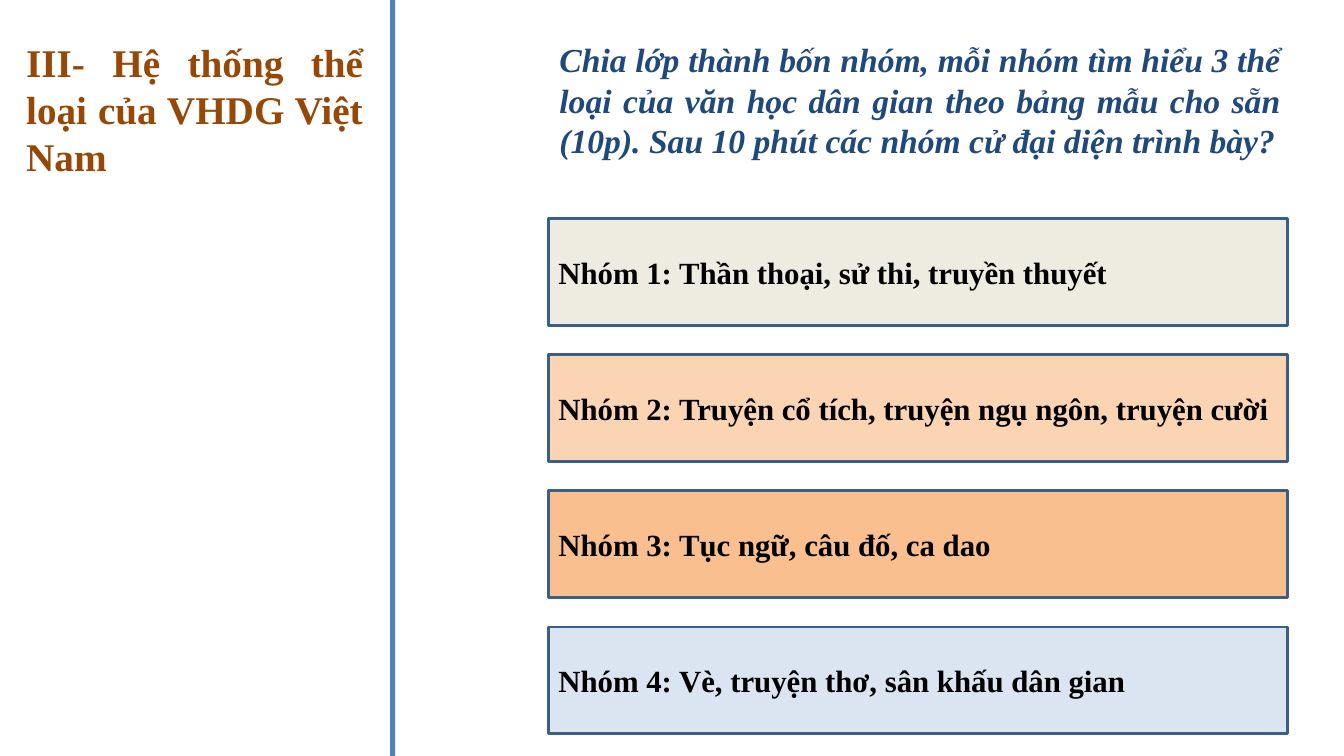
from pptx import Presentation
from pptx import util as u
from pptx.dml.color import RGBColor
from pptx.enum import shapes, text

WIDTH, HEIGHT = 13.33, 7.5
FONT = "Times New Roman"
TITLE_ONLY = 5

HEADING = "III- Hệ thống thể loại của VHDG Việt Nam"
TASK = ("Chia lớp thành bốn nhóm, mỗi nhóm tìm hiểu 3 thể loại của văn học dân gian "
        "theo bảng mẫu cho sẵn (10p). Sau 10 phút các nhóm cử đại diện trình bày?")
GROUPS = [
    ("Nhóm 1: Thần thoại, sử thi, truyền thuyết", "EEECE1"),
    ("Nhóm 2: Truyện cổ tích, truyện ngụ ngôn, truyện cười", "FBD4B4"),
    ("Nhóm 3: Tục ngữ, câu đố, ca dao", "FABF8E"),
    ("Nhóm 4: Vè, truyện thơ, sân khấu dân gian", "DAE5F1"),
]


def color(value):
    return RGBColor.from_string(value)


def inches(box):
    return [u.Inches(length) for length in box]


def write(shape, wording, size, ink, anchor=text.MSO_ANCHOR.TOP, italic=False):
    """Fill a shape with one bold, justified paragraph."""
    frame = shape.text_frame
    frame_format = {"word_wrap": True, "auto_size": text.MSO_AUTO_SIZE.NONE,
                    "vertical_anchor": anchor}
    for name, value in frame_format.items():
        setattr(frame, name, value)
    paragraph = frame.paragraphs[0]
    paragraph.alignment = text.PP_ALIGN.JUSTIFY
    run = paragraph.add_run()
    run.text = wording
    font_format = {"name": FONT, "size": u.Pt(size), "bold": True, "italic": italic}
    for name, value in font_format.items():
        setattr(run.font, name, value)
    run.font.color.rgb = color(ink)


def add_rectangle(slide, box, fill, line=None):
    shape = slide.shapes.add_shape(shapes.MSO_SHAPE.RECTANGLE, *inches(box))
    shape.shadow.inherit = False
    shape.fill.solid()
    shape.fill.fore_color.rgb = color(fill)
    if line:
        shape.line.color.rgb = color(line)
        shape.line.width = u.Pt(2)
    else:
        shape.line.fill.background()
    return shape


def add_heading(slide, box):
    title = slide.shapes.title
    title.left, title.top, title.width, title.height = inches(box)
    write(title, HEADING, 28, "974806")


def add_task(slide, box):
    task = slide.shapes.add_textbox(*inches(box))
    write(task, TASK, 24, "1F497D", italic=True)


def add_groups(slide, box):
    """Stack the group cards evenly down the box."""
    left, top, width, height = box
    card_height = 1.06
    pitch = (height - card_height) / (len(GROUPS) - 1)
    for row, (wording, fill) in enumerate(GROUPS):
        card = add_rectangle(slide, (left, top + row * pitch, width, card_height),
                             fill, line="395E89")
        write(card, wording, 22, "000000", anchor=text.MSO_ANCHOR.MIDDLE)


def main():
    presentation = Presentation()
    presentation.slide_width, presentation.slide_height = inches((WIDTH, HEIGHT))
    slide = presentation.slides.add_slide(presentation.slide_layouts[TITLE_ONLY])
    add_heading(slide, (0.16, 0.33, 3.54, 1.51))
    add_task(slide, (5.45, 0.34, 7.35, 1.31))
    add_groups(slide, (5.44, 2.17, 7.33, 5.11))
    add_rectangle(slide, (3.87, 0, 0.05, HEIGHT), "4F81BD")
    presentation.save("out.pptx")


if __name__ == "__main__":
    main()
